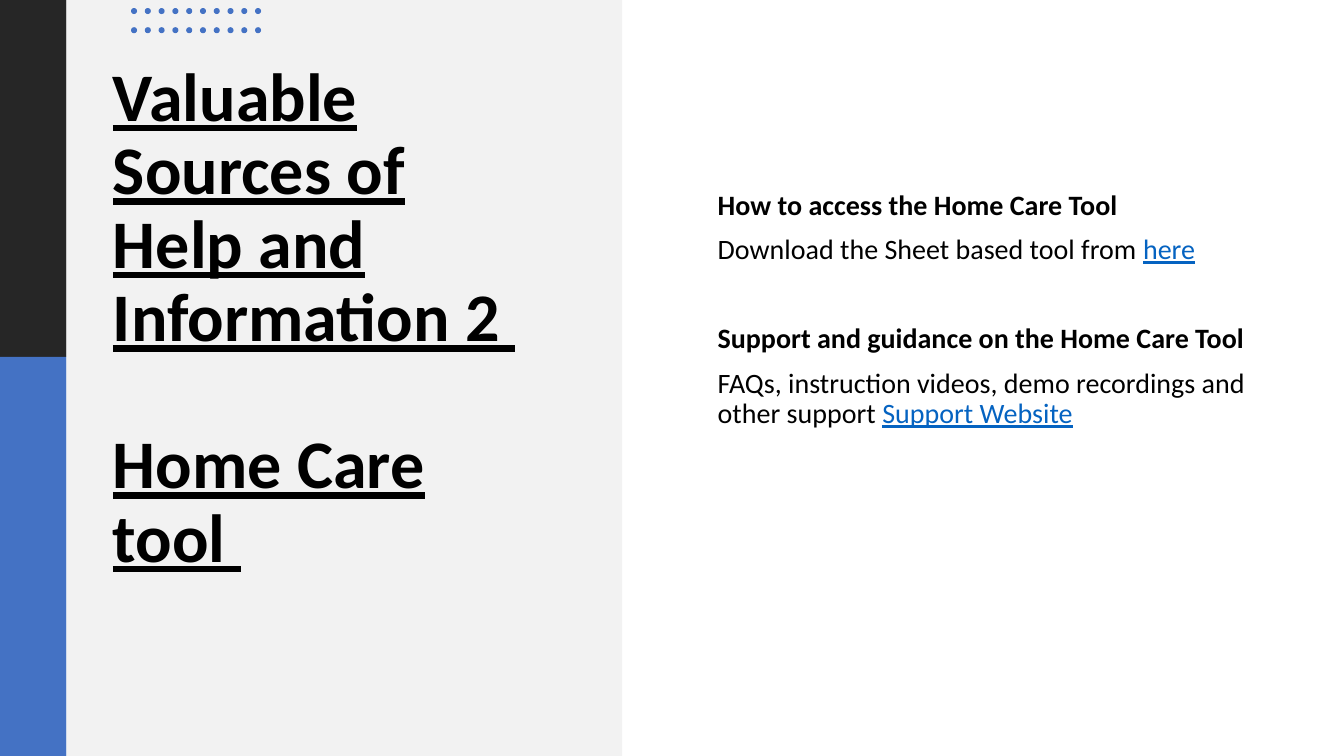
from pptx import Presentation
from pptx.dml.color import RGBColor
from pptx.enum.shapes import MSO_SHAPE
from pptx.enum.text import MSO_ANCHOR, MSO_AUTO_SIZE, PP_ALIGN
from pptx.util import Inches, Pt

BLUE = "4472C4"
BLACK = "000000"
LINK = "0563C1"


def colour(value):
    return RGBColor.from_string(value)


def add_block(shapes, kind, left, top, width, height, fill):
    block = shapes.add_shape(kind, Inches(left), Inches(top), Inches(width), Inches(height))
    block.shadow.inherit = False
    block.fill.solid()
    block.fill.fore_color.rgb = colour(fill)
    block.line.fill.background()


def add_dots(slide, columns=10, rows=2):
    group = slide.shapes.add_group_shape()
    column_gap = (2.53 - 1.3) / (columns - 1)
    for column in range(columns):
        for row in range(rows):
            add_block(group.shapes, MSO_SHAPE.OVAL, 1.3 + column * column_gap,
                      0.08 + row * 0.19, 0.06, 0.06, BLUE)


def prepare_frame(box, left, top, width, height, margin_top):
    box.left, box.top = Inches(left), Inches(top)
    box.width, box.height = Inches(width), Inches(height)
    frame = box.text_frame
    frame.word_wrap = True
    frame.auto_size = MSO_AUTO_SIZE.NONE
    frame.vertical_anchor = MSO_ANCHOR.TOP
    frame.margin_top = Inches(margin_top)
    return frame


def fill_paragraph(para, spans, size, space_before):
    """Write spans given as (text, bold, underline, colour)."""
    para.alignment = PP_ALIGN.LEFT
    para.line_spacing = 0.9
    para.space_before = Pt(space_before)
    for text, bold, underline, text_colour in spans:
        span = para.add_run()
        span.text = text
        span.font.name = "Calibri"
        span.font.size = Pt(size)
        span.font.bold = bold
        span.font.underline = underline
        span.font.color.rgb = colour(text_colour)


def fill_frame(frame, size, paragraphs):
    """Write paragraphs given as (space before, spans)."""
    for index, (space_before, spans) in enumerate(paragraphs):
        para = frame.add_paragraph() if index else frame.paragraphs[0]
        fill_paragraph(para, spans, size, space_before)


def heading(text):
    return [(text, True, False, BLACK)]


def linked(text, link_text):
    return [(text, False, False, BLACK), (link_text, False, True, LINK)]


def add_title(slide):
    title = slide.shapes.title
    slide.shapes.element.append(title.element)  # in front of the panels
    frame = prepare_frame(title, 1.02, 0.46, 4.29, 6.88, 0.16)
    fill_frame(frame, 48.6, [
        (0, [("Valuable Sources of Help and Information 2 ", True, True, BLACK)]),
        (52.5, [("Home Care tool ", True, True, BLACK)]),
    ])


def add_guidance(slide):
    box = slide.shapes.add_textbox(0, 0, 0, 0)
    frame = prepare_frame(box, 7.02, 0.55, 5.58, 6.1, 1.35)
    fill_frame(frame, 20, [
        (0, heading("How to access the Home Care Tool")),
        (10, linked("Download the Sheet based tool from ", "here")),
        (42, heading("Support and guidance on the Home Care Tool")),
        (10, linked("FAQs, instruction videos, demo recordings and other support ",
                    "Support Website")),
    ])


def main():
    deck = Presentation()
    deck.slide_width, deck.slide_height = Inches(13.33), Inches(7.5)
    slide = deck.slides.add_slide(deck.slide_layouts[5])
    for left, top, width, height, fill in [
        (0, 0, 0.66, 3.54, "262626"),
        (0, 3.54, 0.66, 3.96, BLUE),
        (0.66, 0, 5.51, 7.5, "F2F2F2"),
    ]:
        add_block(slide.shapes, MSO_SHAPE.RECTANGLE, left, top, width, height, fill)
    add_title(slide)
    add_dots(slide)
    add_guidance(slide)
    deck.save("out.pptx")


if __name__ == "__main__":
    main()
